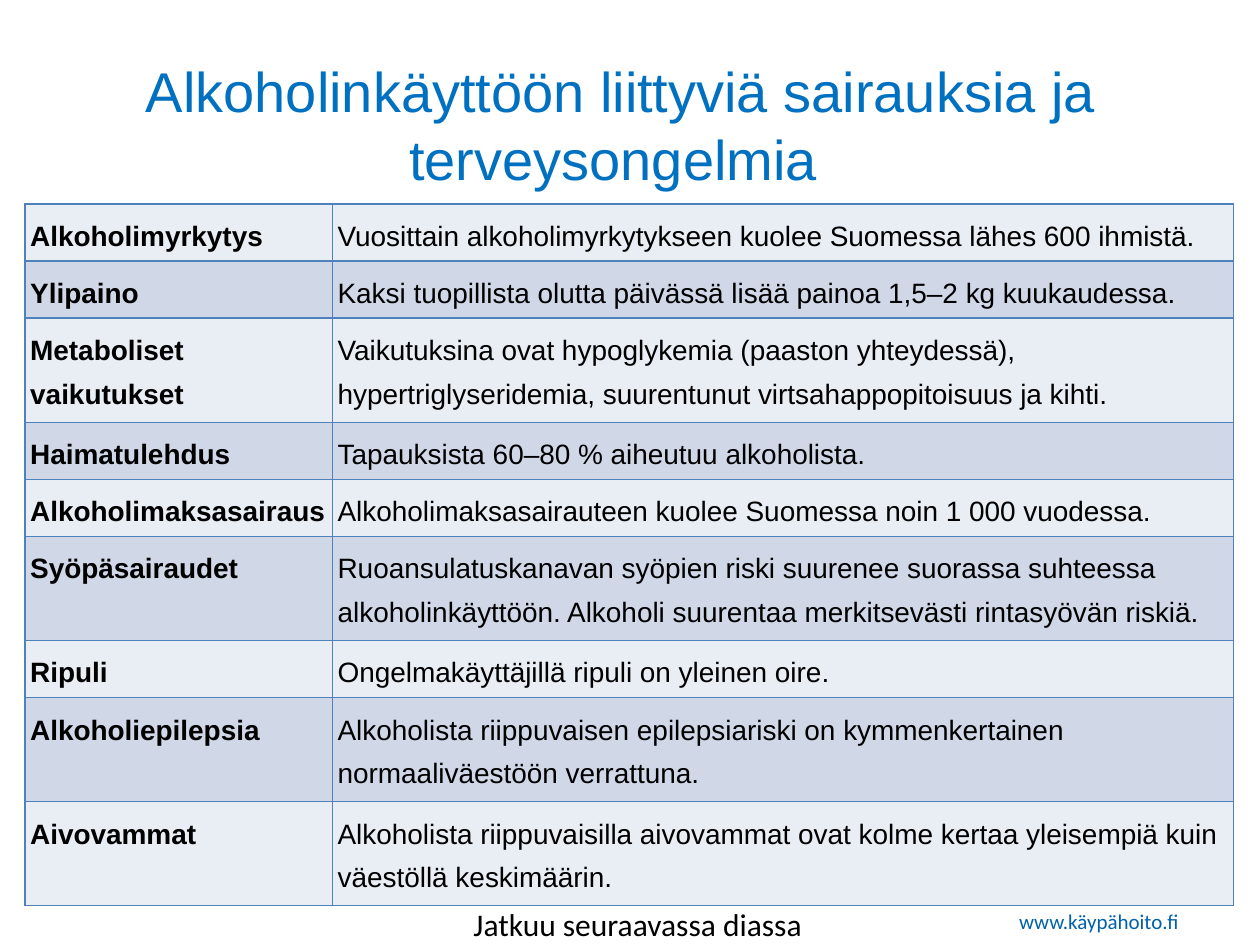
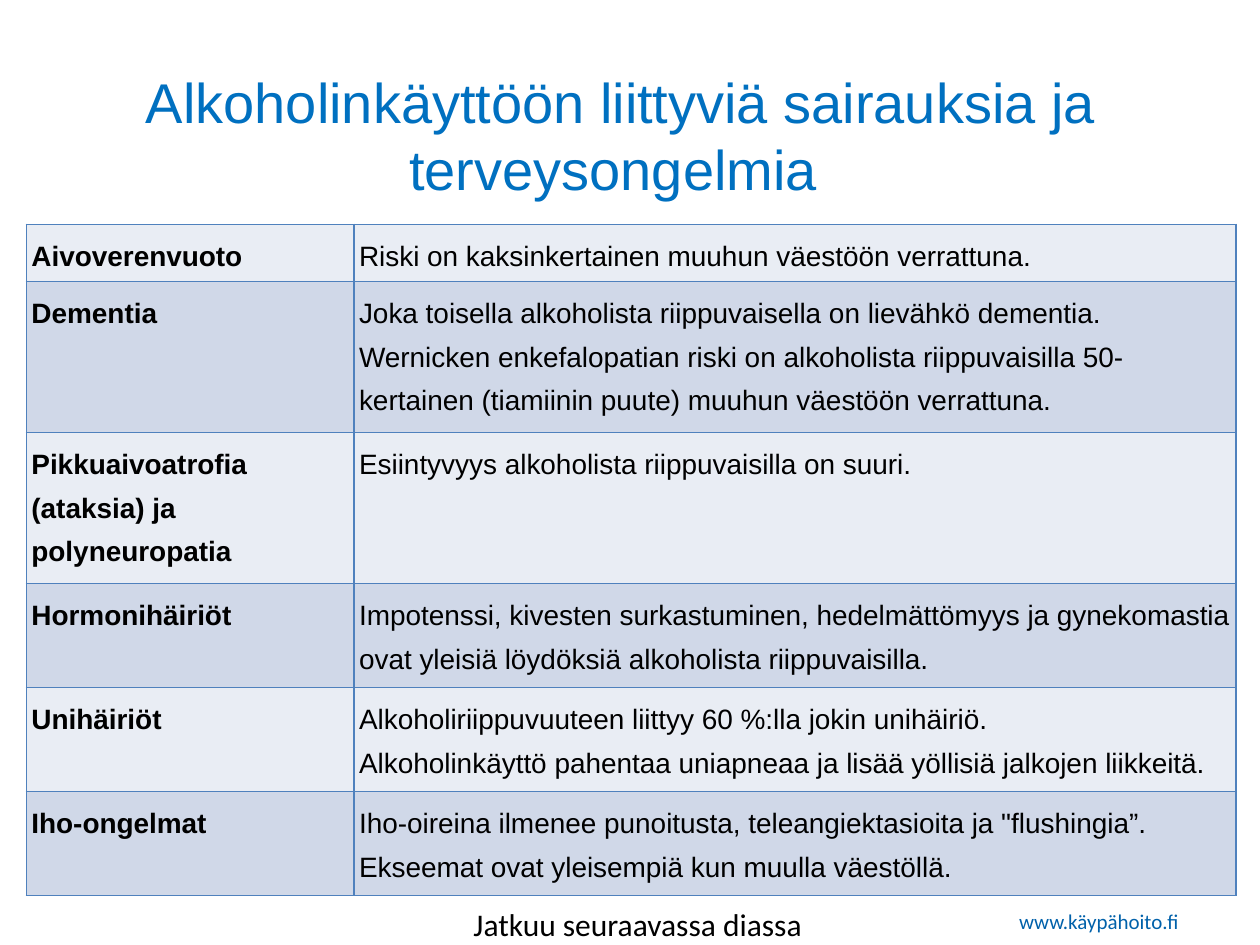
"""Build two slides of tables on alcohol-related diseases."""
from dataclasses import dataclass

import lxml.etree
import pptx
import pptx.dml.color
import pptx.enum.text
import pptx.oxml.ns
import pptx.util

Inches = pptx.util.Inches
Pt = pptx.util.Pt

TITLE = "Alkoholinkäyttöön liittyviä sairauksia ja terveysongelmia "
TITLE_BLUE = "0070C0"
LINK_BLUE = "0061AA"
BORDER_BLUE = "4F81BD"
BLACK = "000000"
BANDS = ("E9EDF4", "D0D8E8")
CELL_INSET = 0.04


@dataclass(frozen=True)
class TextStyle:
    """Font settings of a text."""
    font: str
    size: int
    color: str
    bold: bool = False


@dataclass(frozen=True)
class Label:
    """A text box with its place and style."""
    text: str
    left: float
    top: float
    width: float
    height: float
    style: TextStyle
    centered: bool = False
    wrap: bool = True


@dataclass(frozen=True)
class Disease:
    """One table row: a disease, its facts and the row height."""
    name: str
    facts: str
    height: float


@dataclass(frozen=True)
class DiseasePage:
    """A slide with a title and a table of diseases."""
    title_top: float
    table_left: float
    table_top: float
    columns: tuple[float, float]
    diseases: tuple[Disease, ...]


TITLE_STYLE = TextStyle("Arial", 32, TITLE_BLUE)
NAME_STYLE = TextStyle("Arial", 16, BLACK, bold=True)
FACTS_STYLE = TextStyle("Arial", 16, BLACK)

FOOTERS = (
    Label("www.käypähoito.fi", 7.99, 7.16, 1.89, 0.3, TextStyle("Calibri", 12, LINK_BLUE)),
    Label("Jatkuu seuraavassa diassa", 3.66, 7.13, 2.83, 0.4,
          TextStyle("Calibri", 18, BLACK), wrap=False),
)

ONE_LINE, TWO_LINES, THREE_LINES = 0.43, 0.77, 1.12

PAGES = (
    DiseasePage(0.36, 0.2, 1.62, (2.44, 7.15), (
        Disease("Alkoholimyrkytys",
                "Vuosittain alkoholimyrkytykseen kuolee Suomessa lähes 600 ihmistä.", ONE_LINE),
        Disease("Ylipaino",
                "Kaksi tuopillista olutta päivässä lisää painoa 1,5–2 kg kuukaudessa.", ONE_LINE),
        Disease("Metaboliset vaikutukset",
                "Vaikutuksina ovat hypoglykemia (paaston yhteydessä), hypertriglyseridemia, "
                "suurentunut virtsahappopitoisuus ja kihti.", TWO_LINES),
        Disease("Haimatulehdus", "Tapauksista 60–80 % aiheutuu alkoholista.", ONE_LINE),
        Disease("Alkoholimaksasairaus",
                "Alkoholimaksasairauteen kuolee Suomessa noin 1 000 vuodessa.", ONE_LINE),
        Disease("Syöpäsairaudet",
                "Ruoansulatuskanavan syöpien riski suurenee suorassa suhteessa "
                "alkoholinkäyttöön. Alkoholi suurentaa merkitsevästi rintasyövän riskiä.",
                TWO_LINES),
        Disease("Ripuli", "Ongelmakäyttäjillä ripuli on yleinen oire.", ONE_LINE),
        Disease("Alkoholiepilepsia",
                "Alkoholista riippuvaisen epilepsiariski on kymmenkertainen "
                "normaaliväestöön verrattuna.", TWO_LINES),
        Disease("Aivovammat",
                "Alkoholista riippuvaisilla aivovammat ovat kolme kertaa yleisempiä kuin "
                "väestöllä keskimäärin.", TWO_LINES),
    )),
    DiseasePage(0.44, 0.21, 1.78, (2.6, 7), (
        Disease("Aivoverenvuoto",
                "Riski on kaksinkertainen muuhun väestöön verrattuna.", ONE_LINE),
        Disease("Dementia",
                "Joka toisella alkoholista riippuvaisella on lievähkö dementia.\v"
                "Wernicken enkefalopatian riski on alkoholista riippuvaisilla 50-kertainen "
                "(tiamiinin puute) muuhun väestöön verrattuna.", THREE_LINES),
        Disease("Pikkuaivoatrofia (ataksia) ja polyneuropatia",
                "Esiintyvyys alkoholista riippuvaisilla on suuri.", 1.14),
        Disease("Hormonihäiriöt",
                "Impotenssi, kivesten surkastuminen, hedelmättömyys ja gynekomastia "
                "ovat yleisiä löydöksiä alkoholista riippuvaisilla.", TWO_LINES),
        Disease("Unihäiriöt",
                "Alkoholiriippuvuuteen liittyy 60 %:lla jokin unihäiriö.\n"
                "Alkoholinkäyttö pahentaa uniapneaa ja lisää yöllisiä jalkojen liikkeitä.",
                TWO_LINES),
        Disease("Iho-ongelmat",
                "Iho-oireina ilmenee punoitusta, teleangiektasioita ja \"flushingia”. "
                "Ekseemat ovat yleisempiä kun muulla väestöllä.", 0.81),
    )),
)


def rgb(color: str) -> pptx.dml.color.RGBColor:
    """Turn a hex string into a colour."""
    return pptx.dml.color.RGBColor.from_string(color)


def style_paragraph(para, style: TextStyle) -> None:
    """Apply a text style to a paragraph."""
    para.font.name = style.font
    para.font.size = Pt(style.size)
    para.font.bold = style.bold
    para.font.color.rgb = rgb(style.color)


def draw_label(page, label: Label) -> None:
    """Draw a text box."""
    box = page.shapes.add_textbox(Inches(label.left), Inches(label.top),
                                  Inches(label.width), Inches(label.height))
    frame = box.text_frame
    frame.word_wrap = label.wrap
    frame.text = label.text
    para = frame.paragraphs[0]
    if label.centered:
        frame.vertical_anchor = pptx.enum.text.MSO_ANCHOR.MIDDLE
        para.alignment = pptx.enum.text.PP_ALIGN.CENTER
    style_paragraph(para, label.style)


def add_borders(cell) -> None:
    """Put a thin blue line on each side of a cell."""
    qn = pptx.oxml.ns.qn
    properties = cell._tc.get_or_add_tcPr()
    for position, side in enumerate(("a:lnL", "a:lnR", "a:lnT", "a:lnB")):
        line = lxml.etree.Element(qn(side), w=str(Pt(1)))
        fill = lxml.etree.SubElement(line, qn("a:solidFill"))
        lxml.etree.SubElement(fill, qn("a:srgbClr"), val=BORDER_BLUE)
        properties.insert(position, line)


def fill_cell(cell, text: str, style: TextStyle, band: str) -> None:
    """Write and format one table cell."""
    cell.margin_left = cell.margin_right = Inches(CELL_INSET)
    cell.margin_top = cell.margin_bottom = Inches(CELL_INSET)
    cell.fill.solid()
    cell.fill.fore_color.rgb = rgb(band)
    add_borders(cell)
    cell.text_frame.text = text
    for para in cell.text_frame.paragraphs:
        para.line_spacing = 1.4
        style_paragraph(para, style)


def draw_table(page, content: DiseasePage) -> None:
    """Draw the table of diseases."""
    diseases = content.diseases
    height = sum(disease.height for disease in diseases)
    table = page.shapes.add_table(
        len(diseases), len(content.columns), Inches(content.table_left),
        Inches(content.table_top), Inches(sum(content.columns)), Inches(height)).table
    table.first_row = False
    table.horz_banding = False
    for column, width in zip(table.columns, content.columns):
        column.width = Inches(width)
    for index, disease in enumerate(diseases):
        table.rows[index].height = Inches(disease.height)
        band = BANDS[index % len(BANDS)]
        fill_cell(table.cell(index, 0), disease.name, NAME_STYLE, band)
        fill_cell(table.cell(index, 1), disease.facts, FACTS_STYLE, band)


def main() -> None:
    """Build and save the deck."""
    deck = pptx.Presentation()
    deck.slide_width = Inches(10)
    deck.slide_height = Inches(7.5)
    for content in PAGES:
        page = deck.slides.add_slide(deck.slide_layouts[6])
        draw_label(page, Label(TITLE, 0.43, content.title_top, 9, 1.25,
                               TITLE_STYLE, centered=True))
        draw_table(page, content)
        for footer in FOOTERS:
            draw_label(page, footer)
    deck.save("out.pptx")


if __name__ == "__main__":
    main()
